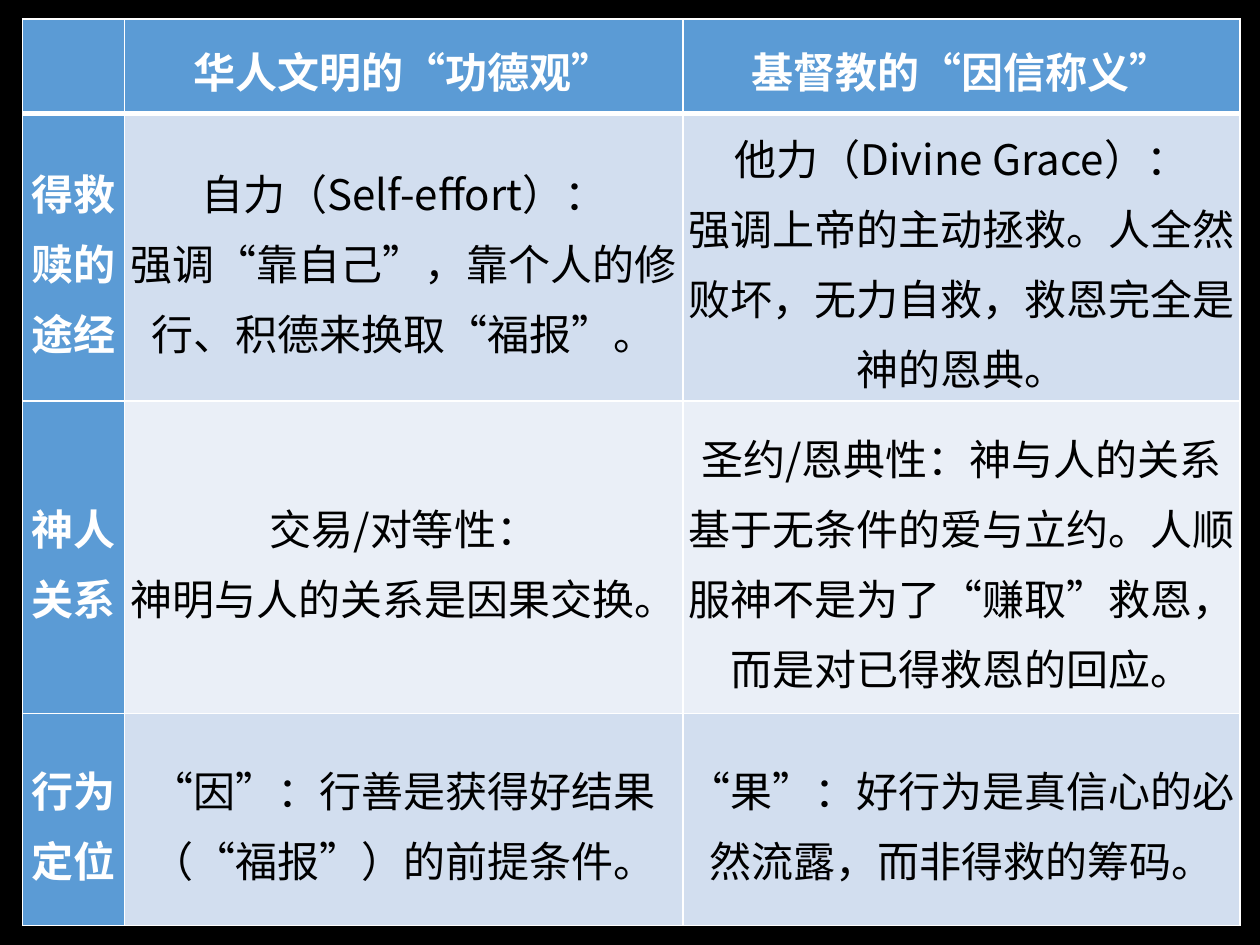
from dataclasses import dataclass

from lxml import etree
from pptx import Presentation
from pptx import util as u
from pptx.dml.color import RGBColor
from pptx.enum import lang, text
from pptx.oxml.ns import qn

PX = 9144  # EMU per px, 100 px to the inch
FONT = "Noto Sans CJK SC"
BLACK = RGBColor(0x00, 0x00, 0x00)
WHITE = RGBColor(0xFF, 0xFF, 0xFF)
BLUE = RGBColor(0x5B, 0x9B, 0xD5)
BAND_DARK = RGBColor(0xD2, 0xDE, 0xEF)
BAND_LIGHT = RGBColor(0xEA, 0xEF, 0xF7)


@dataclass(frozen=True)
class Row:
    height: int
    band: RGBColor
    texts: tuple[str, str, str]


COLUMNS = (81, 443, 442)
ROWS = (
    Row(75, BLUE, ("", "华人文明的“功德观”", "基督教的“因信称义”")),
    Row(222, BAND_DARK, (
        "得救赎的途经",
        "自力（Self-effort）：\n强调“靠自己”，靠个人的修行、积德来换取“福报”。",
        "他力（Divine Grace）：\n强调上帝的主动拯救。人全然败坏，无力自救，救恩完全是神的恩典。")),
    Row(248, BAND_LIGHT, (
        "神人关系",
        "交易/对等性：\n神明与人的关系是因果交换。",
        "圣约/恩典性：神与人的关系基于无条件的爱与立约。"
        "人顺服神不是为了“赚取”救恩，而是对已得救恩的回应。")),
    Row(168, BAND_DARK, (
        "行为定位",
        "“因”：行善是获得好结果（“福报”）的前提条件。",
        "“果”：好行为是真信心的必然流露，而非得救的筹码。")),
)


def px(n: int) -> int:
    return u.Emu(n * PX)


def set_borders(cell, color: RGBColor, **widths: int) -> None:
    """Draw the cell's sides; widths are points keyed by L, R, T and B."""
    tc_pr = cell._tc.get_or_add_tcPr()
    for side in "LRTB":
        ln = etree.SubElement(tc_pr, qn(f"a:ln{side}"), w=str(u.Pt(widths.get(side, 1))))
        fill = etree.SubElement(ln, qn("a:solidFill"))
        etree.SubElement(fill, qn("a:srgbClr"), val=str(color))


def write(cell, content: str, *, size: int, color: RGBColor, bold: bool) -> None:
    tf = cell.text_frame
    tf.text = content
    for p in tf.paragraphs:
        p.alignment = text.PP_ALIGN.CENTER
        p.line_spacing = 1.15
        for r in p.runs:
            f = r.font
            f.size, f.bold, f.name = u.Pt(size), bold, FONT
            f.color.rgb = color
            f.language_id = lang.MSO_LANGUAGE_ID.SIMPLIFIED_CHINESE
            etree.SubElement(r._r.get_or_add_rPr(), qn("a:ea"), typeface=FONT)


def fill_cell(cell, content: str, row: int, col: int) -> None:
    heading = row == 0 or col == 0
    cell.margin_left = cell.margin_right = px(4)
    cell.margin_top = cell.margin_bottom = px(3)
    cell.vertical_anchor = text.MSO_ANCHOR.MIDDLE
    set_borders(cell, WHITE, B=3 if row == 0 else 1, T=3 if row == 1 else 1)
    cell.fill.solid()
    cell.fill.fore_color.rgb = BLUE if heading else ROWS[row].band
    write(cell, content, size=24, color=WHITE if heading else BLACK, bold=heading)


def main() -> None:
    prs = Presentation()
    prs.slide_width, prs.slide_height = px(1000), px(750)
    s = prs.slides.add_slide(prs.slide_layouts[6])
    s.background.fill.solid()
    s.background.fill.fore_color.rgb = BLACK

    table = s.shapes.add_table(
        len(ROWS), len(COLUMNS), px(18), px(15),
        px(sum(COLUMNS)), px(sum(row.height for row in ROWS))).table
    for col, width in enumerate(COLUMNS):
        table.columns[col].width = px(width)
    for i, row in enumerate(ROWS):
        table.rows[i].height = px(row.height)
        for col, content in enumerate(row.texts):
            fill_cell(table.cell(i, col), content, i, col)

    prs.save("out.pptx")


if __name__ == "__main__":
    main()
